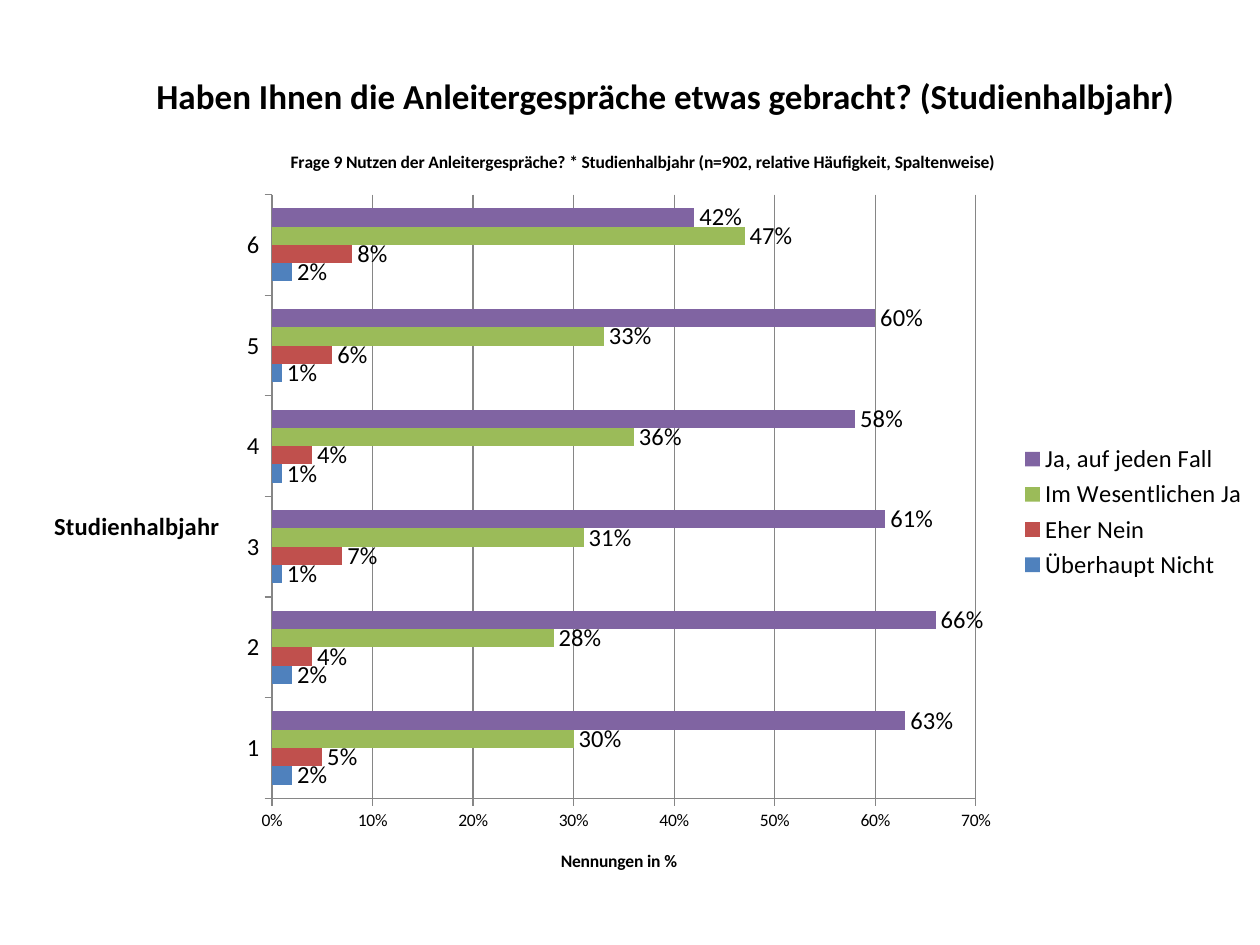
from lxml.etree import SubElement
from pptx import Presentation
from pptx.chart.data import CategoryChartData
from pptx.dml.color import RGBColor
from pptx.enum.chart import XL_CHART_TYPE, XL_LABEL_POSITION, XL_LEGEND_POSITION, XL_TICK_MARK
from pptx.enum.text import PP_ALIGN
from pptx.oxml.ns import qn
from pptx.util import Pt

EMU_PER_PX = 914400 // 126
FONT = "Calibri"
COLORS = {"text": "000000", "grid": "868686", "not_at_all": "4F81BD",
          "rather_no": "C0504D", "mostly_yes": "9BBB59", "definitely": "8064A2"}
SEMESTERS = ["1", "2", "3", "4", "5", "6"]
ANSWERS = [
    ("Überhaupt Nicht", "not_at_all", (0.02, 0.02, 0.01, 0.01, 0.01, 0.02)),
    ("Eher Nein", "rather_no", (0.05, 0.04, 0.07, 0.04, 0.06, 0.08)),
    ("Im Wesentlichen Ja", "mostly_yes", (0.30, 0.28, 0.31, 0.36, 0.33, 0.47)),
    ("Ja, auf jeden Fall", "definitely", (0.63, 0.66, 0.61, 0.58, 0.60, 0.42)),
]


def px(length):
    return length * EMU_PER_PX


def color(name):
    return RGBColor.from_string(COLORS[name])


def style_font(font, size, bold=False):
    font.name = FONT
    font.size = Pt(size)
    font.bold = bold
    font.color.rgb = color("text")


def set_title(owner, text, size):
    """Give a chart or an axis a bold title and return that title."""
    title = owner.chart_title if hasattr(owner, "chart_title") else owner.axis_title
    title.text_frame.text = text
    style_font(title.text_frame.paragraphs[0].runs[0].font, size, bold=True)
    return title


def set_layout(parent, position, **values):
    """Give a chart part a manual layout, as the child at position, in fractions of the chart."""
    for old_layout in parent.findall(qn("c:layout")):
        parent.remove(old_layout)
    layout = SubElement(parent, qn("c:layout"))
    parent.insert(position, layout)
    manual = SubElement(layout, qn("c:manualLayout"))
    for tag, value in values.items():
        SubElement(manual, qn(f"c:{tag}")).set("val", str(value))


def style_axis(axis, title, title_size, label_size):
    axis.major_tick_mark = XL_TICK_MARK.OUTSIDE
    axis.minor_tick_mark = XL_TICK_MARK.NONE
    axis.format.line.color.rgb = color("grid")
    axis.format.line.width = Pt(0.75)
    style_font(axis.tick_labels.font, label_size)
    return set_title(axis, title, title_size)


def style_series(series, color_name):
    series.invert_if_negative = False
    series.format.fill.solid()
    series.format.fill.fore_color.rgb = color(color_name)
    labels = series.data_labels
    labels.show_value = True
    labels.position = XL_LABEL_POSITION.OUTSIDE_END
    labels.number_format = "0%"
    labels.number_format_is_linked = False
    style_font(labels.font, 14)


def add_answer_chart(slide, left, top, width, height):
    data = CategoryChartData(number_format="0%")
    data.categories = SEMESTERS
    for name, _, values in ANSWERS:
        data.add_series(name, values)
    chart = slide.shapes.add_chart(XL_CHART_TYPE.BAR_CLUSTERED, px(left), px(top),
                                   px(width), px(height), data).chart
    style_font(chart.font, 10)
    set_title(chart, "Frage 9 Nutzen der Anleitergespräche? * Studienhalbjahr "
                     "(n=902, relative Häufigkeit, Spaltenweise)", 10)

    plot = chart.plots[0]
    plot.gap_width = 150
    plot.vary_by_categories = False
    for series, (_, color_name, _) in zip(plot.series, ANSWERS):
        style_series(series, color_name)

    category_title = style_axis(chart.category_axis, "Studienhalbjahr", 14, 14)
    body_properties = category_title.text_frame._txBody.find(qn("a:bodyPr"))
    body_properties.set("rot", "0")
    body_properties.set("vert", "horz")
    set_layout(category_title._element, 1, xMode="edge", yMode="edge", x=0.02, y=0.49)

    value_axis = chart.value_axis
    style_axis(value_axis, "Nennungen in %", 10, 10)
    value_axis.minimum_scale, value_axis.maximum_scale = 0, 0.7
    value_axis.major_unit = 0.1
    value_axis.tick_labels.number_format = "0%"
    value_axis.tick_labels.number_format_is_linked = False
    value_axis.has_major_gridlines = True
    value_axis.major_gridlines.format.line.color.rgb = color("grid")
    value_axis.major_gridlines.format.line.width = Pt(0.75)

    chart.has_legend = True
    chart.legend.position = XL_LEGEND_POSITION.RIGHT
    chart.legend.include_in_layout = False
    style_font(chart.legend.font, 14)

    plot_area = chart._chartSpace.find(qn("c:chart")).find(qn("c:plotArea"))
    set_layout(plot_area, 0, layoutTarget="inner", xMode="edge", yMode="edge",
               x=0.2, y=0.09, w=0.57, h=0.78)


def add_headline(slide, left, top, width, height):
    text_frame = slide.shapes.add_textbox(px(left), px(top), px(width), px(height)).text_frame
    text_frame.word_wrap = True
    text_frame.text = "Haben Ihnen die Anleitergespräche etwas gebracht? (Studienhalbjahr)"
    paragraph = text_frame.paragraphs[0]
    paragraph.alignment = PP_ALIGN.LEFT
    style_font(paragraph.runs[0].font, 20, bold=True)


def main():
    presentation = Presentation()
    presentation.slide_width, presentation.slide_height = px(1260), px(945)
    slide = presentation.slides.add_slide(presentation.slide_layouts[6])
    add_answer_chart(slide, 25, 125, 1235, 774)
    add_headline(slide, 144, 68, 1091, 55)
    presentation.save("out.pptx")


if __name__ == "__main__":
    main()
